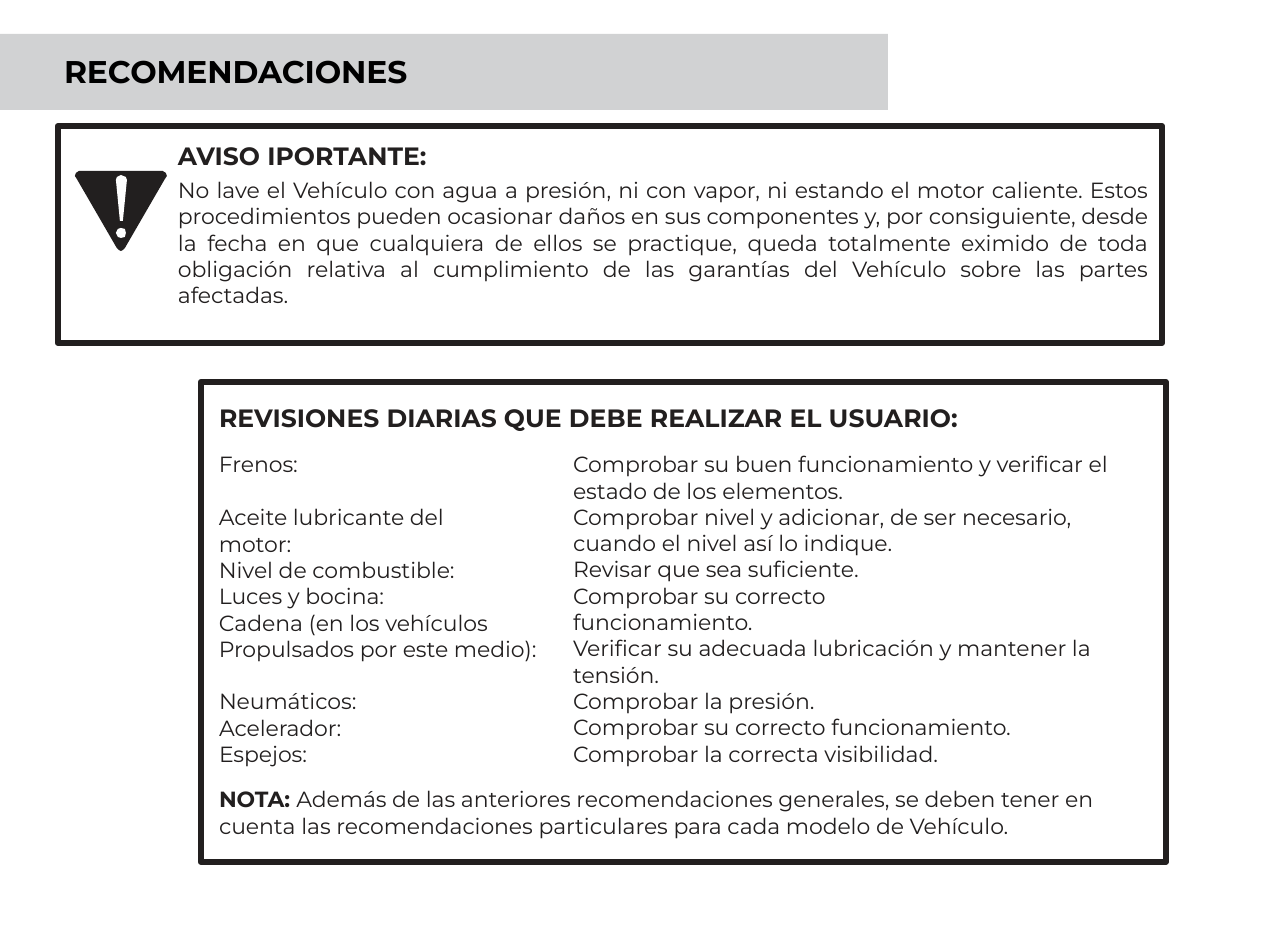
from pptx import Presentation
from pptx import util as u
from pptx.dml.color import RGBColor
from pptx.enum import shapes, text

SCALE = 4053
INK = RGBColor(0x22, 0x1F, 0x1F)
BLACK = RGBColor(0, 0, 0)
WHITE = RGBColor(0xFF, 0xFF, 0xFF)
BAND_GRAY = RGBColor(0xD1, 0xD2, 0xD3)
FONT = "Montserrat"

TRIANGLE = [(163, 171), (79, 171), (76, 173), (75, 176), (77, 179), (117, 248),
            (119, 250), (121, 251), (123, 250), (125, 248), (165, 179),
            (167, 176), (166, 173)]
DOT = [(126, 233), (125, 229), (121, 228), (118, 229), (116, 233),
       (118, 237), (121, 238), (125, 237)]
STROKE = [(127, 180), (126, 177), (121, 175), (117, 177), (116, 180),
          (120, 221), (123, 221)]

NOTICE = (
    "No lave el Vehículo con agua a presión, ni con vapor, ni estando el motor "
    "caliente. Estos procedimientos pueden ocasionar daños en sus componentes y, "
    "por consiguiente, desde la fecha en que cualquiera de ellos se practique, "
    "queda totalmente eximido de toda obligación relativa al cumplimiento de las "
    "garantías del Vehículo sobre las partes afectadas."
)
CHECKS = [
    ((571, 447, 560, 165), [
        "Comprobar su buen funcionamiento y verificar el\vestado de los elementos.",
        "Comprobar nivel y adicionar, de ser necesario,\vcuando el nivel así lo indique.",
        "Revisar que sea suficiente.",
        "Comprobar su correcto\vfuncionamiento."]),
    ((571, 631, 560, 138), [
        "Verificar su adecuada lubricación y mantener la\vtensión.",
        "Comprobar la presión.",
        "Comprobar su correcto funcionamiento.",
        "Comprobar la correcta visibilidad."]),
    ((217, 447, 86, 32), ["Frenos:"]),
    ((217, 500, 340, 165), [
        "Aceite lubricante del\vmotor:",
        "Nivel de combustible:",
        "Luces y bocina:",
        "Cadena (en los vehículos\vPropulsados por este medio):"]),
    ((217, 684, 160, 86), ["Neumáticos:", "Acelerador:", "Espejos:"]),
]


def px(count):
    return u.Emu(count * SCALE)


def style_para(para, size, bold=False, color=INK, align=text.PP_ALIGN.LEFT):
    para.alignment = align
    for span in para.runs:
        span.font.name = FONT
        span.font.size = u.Pt(size)
        span.font.bold = bold
        span.font.color.rgb = color


def set_frame(frame, left=2, top=4, right=0):
    frame.word_wrap = True
    frame.auto_size = text.MSO_AUTO_SIZE.NONE
    frame.vertical_anchor = text.MSO_ANCHOR.TOP
    frame.margin_left, frame.margin_top = px(left), px(top)
    frame.margin_right, frame.margin_bottom = px(right), px(0)


def add_text(page, bounds, lines, size=7, bold=False):
    box = page.shapes.add_textbox(*map(px, bounds))
    frame = box.text_frame
    set_frame(frame)
    frame.text = "\n".join(lines)
    for para in frame.paragraphs:
        style_para(para, size, bold)
    return frame


def add_rectangle(page, bounds, fill=None, outline=None):
    box = page.shapes.add_shape(shapes.MSO_SHAPE.RECTANGLE, *map(px, bounds))
    box.shadow.inherit = False
    if fill is None:
        box.fill.background()
    else:
        box.fill.solid()
        box.fill.fore_color.rgb = fill
    if outline is None:
        box.line.fill.background()
    else:
        box.line.color.rgb = outline
        box.line.width = u.Pt(2)
    return box


def add_outline(group, contours, color):
    first, *others = contours
    builder = group.shapes.build_freeform(*first[0], scale=SCALE)
    builder.add_line_segments(first[1:], close=True)
    for points in others:
        builder.move_to(*points[0])
        builder.add_line_segments(points[1:], close=True)
    outline = builder.convert_to_shape()
    outline.shadow.inherit = False
    outline.fill.solid()
    outline.fill.fore_color.rgb = color
    outline.line.fill.background()


def add_notice(page):
    box = add_rectangle(page, (58, 126, 1104, 217), outline=INK)
    frame = box.text_frame
    set_frame(frame, left=120, top=14, right=14)
    frame.text = "AVISO IPORTANTE:\n" + NOTICE
    heading, body = frame.paragraphs
    style_para(heading, 8, bold=True, align=text.PP_ALIGN.JUSTIFY)
    style_para(body, 7, align=text.PP_ALIGN.JUSTIFY)
    body.space_before = u.Pt(2.1)


def add_warning_sign(page):
    group = page.shapes.add_group_shape()
    add_outline(group, [TRIANGLE], INK)
    add_outline(group, [DOT, STROKE], WHITE)


def add_note(page):
    frame = add_text(page, (217, 782, 910, 59), ["NOTA: "], bold=True)
    para = frame.paragraphs[0]
    span = para.add_run()
    span.text = ("Además de las anteriores recomendaciones generales, se deben tener en "
                 "cuenta las recomendaciones particulares para cada modelo de Vehículo.")
    style_para(para, 7)
    para.runs[0].font.bold = True


def add_title(page):
    band = add_rectangle(page, (0, 34, 888, 76), fill=BAND_GRAY)
    title = page.shapes.title
    band.element.addnext(title.element)
    title.left, title.top, title.width, title.height = map(px, (62, 48, 819, 43))
    set_frame(title.text_frame)
    title.text_frame.text = "RECOMENDACIONES"
    style_para(title.text_frame.paragraphs[0], 10, bold=True, color=BLACK)


def main():
    deck = Presentation()
    deck.slide_width, deck.slide_height = px(1288), px(934)
    page = deck.slides.add_slide(deck.slide_layouts[5])
    add_notice(page)
    add_warning_sign(page)
    add_rectangle(page, (201, 382, 965, 480), outline=INK)
    for bounds, lines in CHECKS:
        add_text(page, bounds, lines)
    add_text(page, (217, 398, 800, 36),
             ["REVISIONES DIARIAS QUE DEBE REALIZAR EL USUARIO:"], size=8, bold=True)
    add_note(page)
    add_title(page)
    deck.save("out.pptx")


if __name__ == "__main__":
    main()
